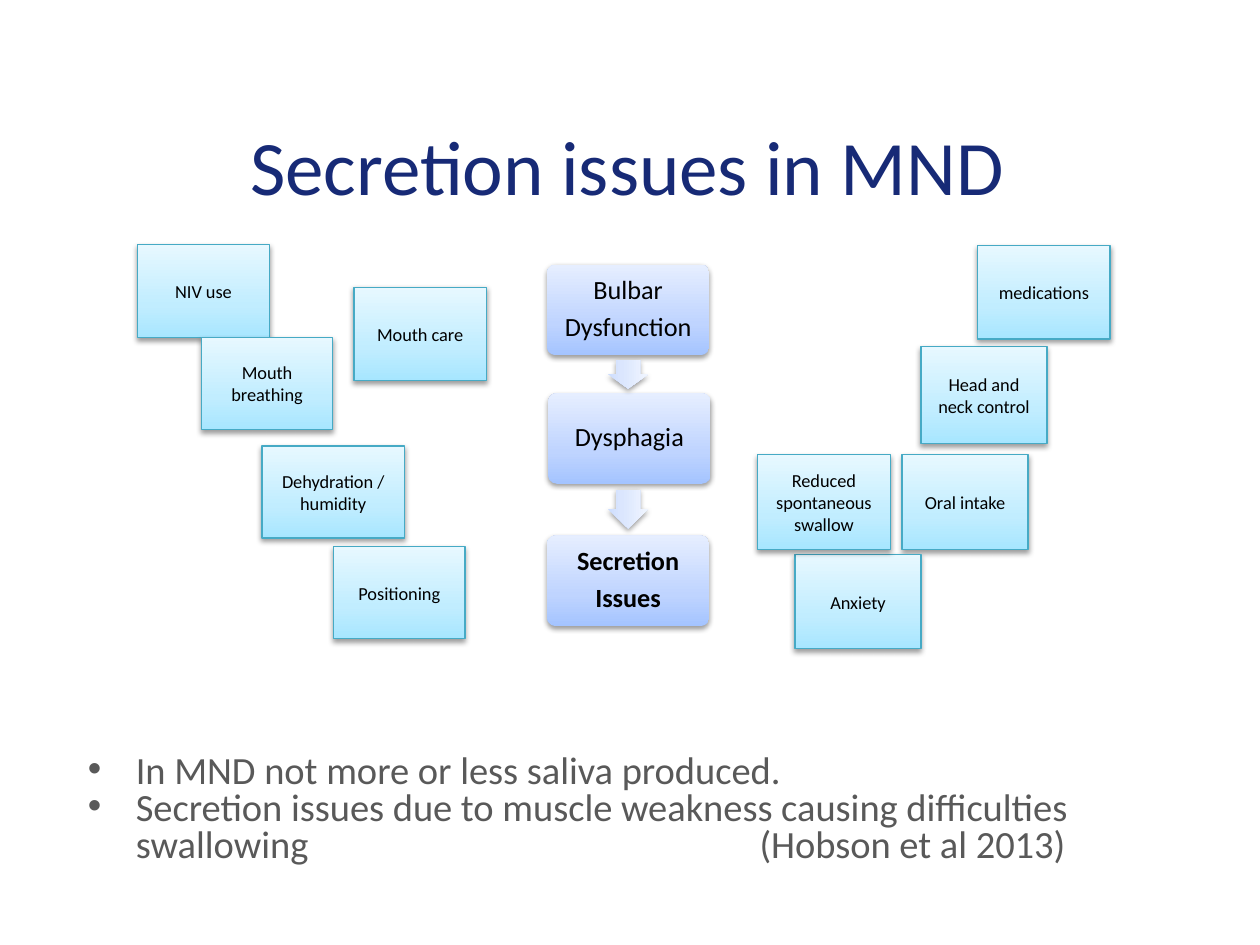
from lxml import etree
from pptx import Presentation
from pptx.dml.color import RGBColor
from pptx.enum.shapes import MSO_SHAPE as Shape
from pptx.enum.text import MSO_ANCHOR as Anchor, PP_ALIGN as Align
from pptx.oxml import parse_xml
from pptx.oxml.ns import nsdecls, qn
from pptx.util import Inches, Pt

FONT = "Calibri"
STEP_STOPS = [(0, "A4C4FF"), (35, "BFD4FF"), (100, "E6EEFF")]
ARROW_STOPS = [(0, "CDDDFE"), (35, "DBE6FE"), (100, "F0F5FF")]
FACTOR_STOPS = [(0, "A7E6FF"), (35, "C1EDFF"), (100, "E7F8FF")]

STEP_SIZE = (1.29, 0.72)
STEPS = [  # left, top, lines, bold
    (4.34, 2.1, ["Bulbar", "Dysfunction"], False),
    (4.35, 3.12, ["Dysphagia"], False),
    (4.34, 4.25, ["Secretion", "Issues"], True),
]
ARROWS = [(4.87, 2.81, 0.23, 0.32), (4.83, 3.88, 0.31, 0.32)]
FACTORS = [  # label, left, top, width, height
    ("NIV use", 1.09, 1.94, 1.05, 0.74),
    ("Positioning", 2.65, 4.34, 1.04, 0.73),
    ("Dehydration / humidity", 2.08, 3.54, 1.13, 0.73),
    ("Mouth breathing", 1.6, 2.68, 1.04, 0.73),
    ("Head and neck control", 7.31, 2.75, 1, 0.77),
    ("Oral intake", 7.16, 3.61, 1, 0.75),
    ("Anxiety", 6.31, 4.4, 1, 0.75),
    ("Reduced spontaneous swallow", 6.01, 3.61, 1.06, 0.75),
    ("Mouth care", 2.81, 2.28, 1.05, 0.74),
    ("medications", 7.76, 1.95, 1.05, 0.74),
]
POINTS = [
    "In MND not more or less saliva produced.",
    "Secretion issues due to muscle weakness causing difficulties swallowing",
]


def rgb(color):
    return RGBColor.from_string(color)


def add_bullet(p, left, hanging):
    pPr = p._p.get_or_add_pPr()
    pPr.set("marL", str(Inches(left)))
    pPr.set("indent", str(-Inches(hanging)))
    etree.SubElement(pPr, qn("a:buFont")).set("typeface", "Arial")
    etree.SubElement(pPr, qn("a:buChar")).set("char", "•")


def write(sp, lines, size, color="000000", bold=False, align=Align.CENTER,
          anchor=Anchor.MIDDLE, inset=(0.1, 0.05), spacing=None, after=0,
          bullet=None):
    """Fill a shape with one paragraph per line; bullet is (left, hanging)."""
    tf = sp.text_frame
    tf.word_wrap = True
    tf.vertical_anchor = anchor
    tf.margin_left = tf.margin_right = Inches(inset[0])
    tf.margin_top = tf.margin_bottom = Inches(inset[1])
    for i, line in enumerate(lines):
        p = tf.paragraphs[0] if i == 0 else tf.add_paragraph()
        p.alignment = align
        if spacing:
            p.line_spacing = spacing
        if after and i < len(lines) - 1:
            p.space_after = Pt(after)
        if bullet:
            add_bullet(p, *bullet)
        r = p.add_run()
        r.text = line
        r.font.name = FONT
        r.font.size = Pt(size)
        r.font.bold = bold
        r.font.color.rgb = rgb(color)


def add_text(slide, box, lines, size, **fmt):
    sp = slide.shapes.add_textbox(*map(Inches, box))
    write(sp, lines, size, **fmt)


def style_gradient(sp, stops):
    """Give a bottom-to-top gradient and a soft shadow beneath."""
    sp.fill.background()
    spPr = sp._element.spPr
    gs = "".join(f'<a:gs pos="{pos * 1000}"><a:srgbClr val="{color}"/></a:gs>'
                 for pos, color in stops)
    fill = parse_xml(f'<a:gradFill {nsdecls("a")} rotWithShape="1"><a:gsLst>{gs}'
                     '</a:gsLst><a:lin ang="16200000" scaled="0"/></a:gradFill>')
    spPr.replace(spPr.find(qn("a:noFill")), fill)
    sp.shadow.inherit = False
    spPr.find(qn("a:effectLst")).append(parse_xml(
        f'<a:outerShdw {nsdecls("a")} blurRad="{Pt(3.1)}" dist="{Pt(1.6)}" '
        'dir="5400000" rotWithShape="0"><a:srgbClr val="000000">'
        '<a:alpha val="38000"/></a:srgbClr></a:outerShdw>'))


def add_block(slide, kind, box, stops, line=None):
    sp = slide.shapes.add_shape(kind, *map(Inches, box))
    style_gradient(sp, stops)
    if line:
        sp.line.color.rgb = rgb(line)
        sp.line.width = Pt(0.75)
    else:
        sp.line.fill.background()
    return sp


def add_step(slide, left, top, lines, bold):
    sp = add_block(slide, Shape.ROUNDED_RECTANGLE, (left, top, *STEP_SIZE),
                   STEP_STOPS)
    sp.adjustments[0] = 0.1
    write(sp, lines, 15, bold=bold, inset=(0.08, 0.08), spacing=0.9, after=5)


def add_down_arrow(slide, box):
    sp = add_block(slide, Shape.RIGHT_ARROW, box, ARROW_STOPS)
    sp.adjustments[0] = 0.6
    sp.rotation = 90


def add_factor(slide, label, *box):
    sp = add_block(slide, Shape.RECTANGLE, box, FACTOR_STOPS, line="46AAC5")
    write(sp, [label], 10.5)


def main():
    prs = Presentation()
    prs.slide_width, prs.slide_height = Inches(10), Inches(7.5)
    slide = prs.slides.add_slide(prs.slide_layouts[6])

    add_text(slide, (0.4, 0.94, 9.16, 1.25), ["Secretion issues in MND"], 44,
             color="172A76", anchor=Anchor.TOP, inset=(0, 0))
    for step in STEPS:
        add_step(slide, *step)
    for box in ARROWS:
        add_down_arrow(slide, box)
    for factor in FACTORS:
        add_factor(slide, *factor)

    body = dict(color="595959", align=Align.LEFT, anchor=Anchor.TOP, spacing=0.8)
    add_text(slide, (0, 5.94, 9.37, 1), POINTS, 22, bullet=(0.98, 0.38), **body)
    add_text(slide, (5.93, 6.53, 3.2, 0.4), ["(Hobson et al 2013)"], 22, **body)
    prs.save("out.pptx")


if __name__ == "__main__":
    main()
